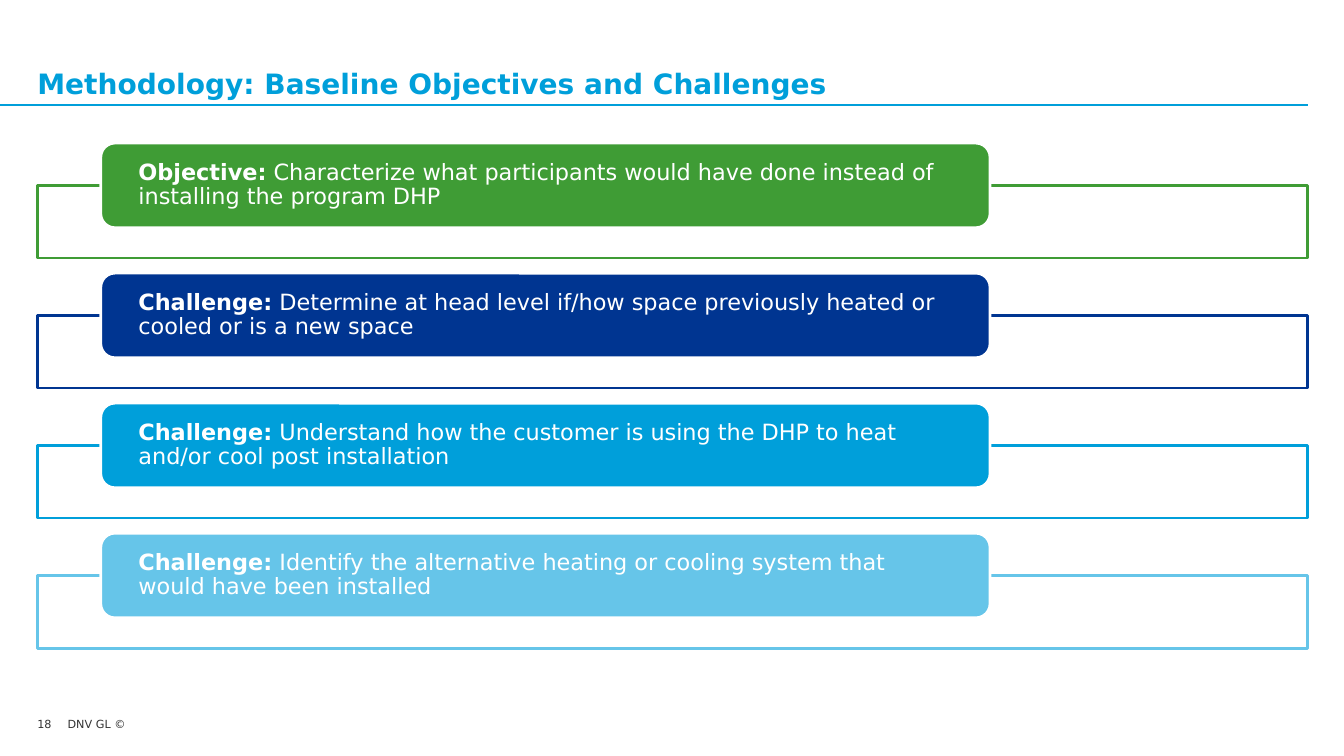
from dataclasses import dataclass

from lxml.etree import SubElement
from pptx import Presentation
from pptx.dml.color import RGBColor
from pptx.enum.shapes import MSO_CONNECTOR as Link, MSO_SHAPE as Kind
from pptx.enum.text import MSO_ANCHOR as Anchor, PP_ALIGN as Align
from pptx.oxml.ns import qn
from pptx.util import Emu, Inches, Pt

WIDE, HIGH = Inches(13.33), Inches(7.5)
FACE = "DejaVu Sans"

WHITE = RGBColor(0xFF, 0xFF, 0xFF)
GREY = RGBColor(0x33, 0x33, 0x33)
GREEN = RGBColor(0x3F, 0x9C, 0x35)
NAVY = RGBColor(0x00, 0x35, 0x91)
BLUE = RGBColor(0x00, 0x9F, 0xDA)
SKY = RGBColor(0x66, 0xC5, 0xE9)

# Shares of the slide, in percent
LEFT, SPAN = 2.78, 94.52
STEP = 17.2


@dataclass
class Box:
    left: float
    top: float
    width: float
    height: float

    def down(self, shift: float) -> "Box":
        return Box(self.left, self.top + shift, self.width, self.height)

    def place(self) -> tuple:
        return (across(self.left), along(self.top),
                across(self.width), along(self.height))


@dataclass
class Card:
    label: str
    text: str
    color: RGBColor


@dataclass
class Note:
    text: str
    box: Box
    size: int
    color: RGBColor
    bold: bool = False
    wrap: bool = True
    anchor: Anchor = Anchor.TOP


FRAME = Box(LEFT, 24.53, SPAN, 9.6)
PILL = Box(7.5, 18.93, 66.17, 11.2)

CARDS = [
    Card("Objective:", " Characterize what participants would have done "
         "instead of installing the program DHP", GREEN),
    Card("Challenge:", " Determine at head level if/how space previously "
         "heated or cooled or is a new space", NAVY),
    Card("Challenge:", " Understand how the customer is using the DHP to "
         "heat and/or cool post installation", BLUE),
    Card("Challenge:", " Identify the alternative heating or cooling system "
         "that would have been installed", SKY),
]

NOTES = [
    Note("Methodology: Baseline Objectives and Challenges",
         Box(LEFT, 3.47, SPAN, 9.73), 20, BLUE, True, anchor=Anchor.BOTTOM),
    Note("18", Box(LEFT, 94.93, 2.25, 2.67), 8, GREY),
    Note("DNV GL ©", Box(5.03, 94.93, 4.43, 1.73), 8, GREY, wrap=False),
]


def across(share: float) -> Emu:
    return Emu(round(WIDE * share / 100))


def along(share: float) -> Emu:
    return Emu(round(HIGH * share / 100))


def style(item, **values) -> None:
    for name, value in values.items():
        setattr(item, name, value)


def write(para, text: str, size: int, color: RGBColor, bold: bool) -> None:
    run = para.add_run()
    run.text = text
    style(run.font, name=FACE, size=Pt(size), bold=bold)
    run.font.color.rgb = color


def block(slide, kind: Kind, box: Box, fill: RGBColor, line: RGBColor):
    shape = slide.shapes.add_shape(kind, *box.place())
    shape.shadow.inherit = False
    shape.fill.solid()
    shape.fill.fore_color.rgb = fill
    shape.line.color.rgb = line
    shape.line.width = Pt(2)
    return shape


def draw_note(slide, note: Note) -> None:
    frame = slide.shapes.add_textbox(*note.box.place()).text_frame
    style(frame, margin_left=0, margin_right=0, margin_top=0,
          margin_bottom=0, word_wrap=note.wrap, vertical_anchor=note.anchor)
    write(frame.paragraphs[0], note.text, note.size, note.color, note.bold)


def draw_card(slide, card: Card, shift: float) -> None:
    # Open frame, slightly see-through
    frame = block(slide, Kind.RECTANGLE, FRAME.down(shift), WHITE, card.color)
    tint = frame.fill._xPr.find(qn("a:solidFill"))[0]
    SubElement(tint, qn("a:alpha")).set("val", "90000")

    # Filled pill with its statement
    pill = block(slide, Kind.ROUNDED_RECTANGLE, PILL.down(shift),
                 card.color, WHITE)
    body = pill.text_frame
    style(body, margin_left=across(2.5), margin_right=across(2.5),
          margin_top=0, margin_bottom=0, word_wrap=True,
          vertical_anchor=Anchor.MIDDLE)
    para = body.paragraphs[0]
    style(para, alignment=Align.LEFT, line_spacing=0.9)
    write(para, card.label, 16, WHITE, True)
    write(para, card.text, 16, WHITE, False)


def draw_rule(slide) -> None:
    top = along(13.87)
    rule = slide.shapes.add_connector(
        Link.STRAIGHT, 0, top, across(LEFT + SPAN), top)
    rule.line.color.rgb = BLUE
    rule.line.width = Pt(1.25)
    SubElement(rule._element.spPr, qn("a:effectLst"))


def main() -> None:
    deck = Presentation()
    style(deck, slide_width=WIDE, slide_height=HIGH)
    slide = deck.slides.add_slide(deck.slide_layouts[6])

    # Title rule, title and footer
    draw_rule(slide)
    for note in NOTES:
        draw_note(slide, note)

    # Stack of statements
    for row, card in enumerate(CARDS):
        draw_card(slide, card, row * STEP)

    deck.save("out.pptx")


if __name__ == "__main__":
    main()
